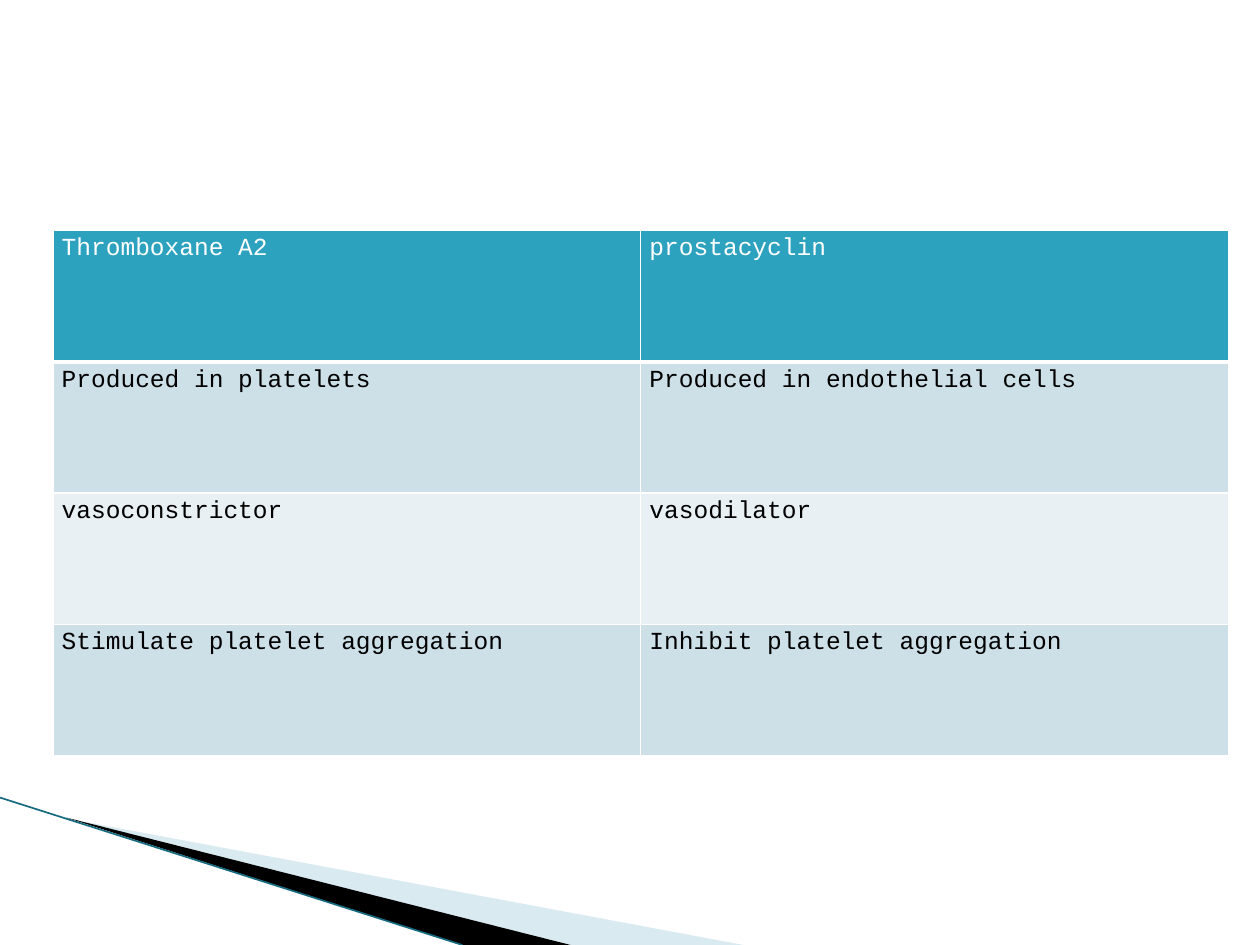
import pptx
import pptx.dml.color
import pptx.enum.shapes
import pptx.oxml
import pptx.oxml.ns
import pptx.util
from lxml import etree
from pptx.util import Inches

FONT = "Courier New"
WHITE = "FFFFFF"
HEADER_FILL = "2DA2BF"
BAND_FILLS = ("CDE0E8", "E8F0F4")
COMPARISON = [
    ("Thromboxane A2", "prostacyclin"),
    ("Produced in platelets", "Produced in endothelial cells"),
    ("vasoconstrictor", "vasodilator"),
    ("Stimulate platelet aggregation", "Inhibit platelet aggregation"),
]


def rgb(value):
    return pptx.dml.color.RGBColor.from_string(value)


def sub(parent, tag, **attributes):
    return etree.SubElement(parent, pptx.oxml.ns.qn(tag), **attributes)


def paint(fill, color):
    fill.solid()
    fill.fore_color.rgb = rgb(color)


def write(text_frame, text, size=14, color="000000", font=FONT):
    run = text_frame.paragraphs[0].add_run()
    run.text = text
    run.font.name = font
    run.font.size = pptx.util.Pt(size)
    run.font.color.rgb = rgb(color)


def set_borders(cell, color, widths):
    properties = cell._tc.get_or_add_tcPr()
    for side, width in widths.items():
        line = sub(properties, f"a:ln{side}", w=str(pptx.util.Pt(width)))
        sub(sub(line, "a:solidFill"), "a:srgbClr", val=color)


def set_frame(shape, left, top, width, height):
    """Give a freeform a new frame while its outline stays in place."""
    outline = shape._element.spPr.find(".//" + pptx.oxml.ns.qn("a:path"))
    for point in outline.iter(pptx.oxml.ns.qn("a:pt")):
        point.set("x", str(int(point.get("x")) + shape.left - left))
        point.set("y", str(int(point.get("y")) + shape.top - top))
    outline.set("w", str(width))
    outline.set("h", str(height))
    shape.left, shape.top, shape.width, shape.height = left, top, width, height


def add_wedge(slide, left, top, points, frame, color, opacity=None):
    corners = [(left + Inches(x), top + Inches(y)) for x, y in points]
    builder = slide.shapes.build_freeform(*corners[0])
    builder.add_line_segments(corners[1:], close=True)
    wedge = builder.convert_to_shape()
    x, y, width, height = (Inches(length) for length in frame)
    set_frame(wedge, left + x, top + y, width, height)
    wedge.shadow.inherit = False
    wedge.line.fill.background()
    paint(wedge.fill, color)
    if opacity is not None:
        tint = wedge._element.spPr.find(".//" + pptx.oxml.ns.qn("a:srgbClr"))
        sub(tint, "a:alpha", val=str(opacity * 1000))


def add_corner_decoration(slide, left, top, width, height):
    bottom = height / Inches(1)
    # Pale and black wedges fan out from one tip
    add_wedge(slide, left, top,
              [(0.55, 0.17), (width / Inches(1), bottom), (4.53, bottom)],
              (0.78, -0.86, 4.16, 1.58), "A0CBDC", opacity=40)
    add_wedge(slide, left, top,
              [(0.53, 0.16), (4.53, bottom), (3.67, bottom)],
              (-0.06, 0, 4.16, 0.92), "000000")
    # Thin edge along the black wedge
    edge = slide.shapes.add_connector(
        pptx.enum.shapes.MSO_CONNECTOR.STRAIGHT,
        left, top, left + Inches(3.67), top + height)
    edge.line.color.rgb = rgb("176B80")
    edge.line.width = pptx.util.Pt(0.95)
    sub(edge._element.spPr, "a:effectLst")


def add_comparison_table(slide, left, top, width, height):
    table = slide.shapes.add_table(
        len(COMPARISON), len(COMPARISON[0]), left, top, width, height).table
    for row_index, texts in enumerate(COMPARISON):
        header = row_index == 0
        fill = HEADER_FILL if header else BAND_FILLS[(row_index - 1) % 2]
        for column_index, text in enumerate(texts):
            cell = table.cell(row_index, column_index)
            cell.margin_left = cell.margin_right = Inches(0.07)
            cell.margin_top = cell.margin_bottom = Inches(0.04)
            set_borders(cell, WHITE,
                        {"L": 1, "R": 1, "T": 1, "B": 3 if header else 1})
            paint(cell.fill, fill)
            write(cell.text_frame, text, color=WHITE if header else "000000")


def main():
    presentation = pptx.Presentation()
    presentation.slide_width = Inches(10)
    presentation.slide_height = Inches(7.5)
    slide = presentation.slides.add_slide(presentation.slide_layouts[6])
    paint(slide.background.fill, WHITE)
    add_corner_decoration(slide, Inches(0), Inches(6.33), Inches(5.9), Inches(1.17))
    add_comparison_table(slide, Inches(0.42), Inches(1.83), Inches(9.33), Inches(4.17))
    presentation.save("out.pptx")


if __name__ == "__main__":
    main()
